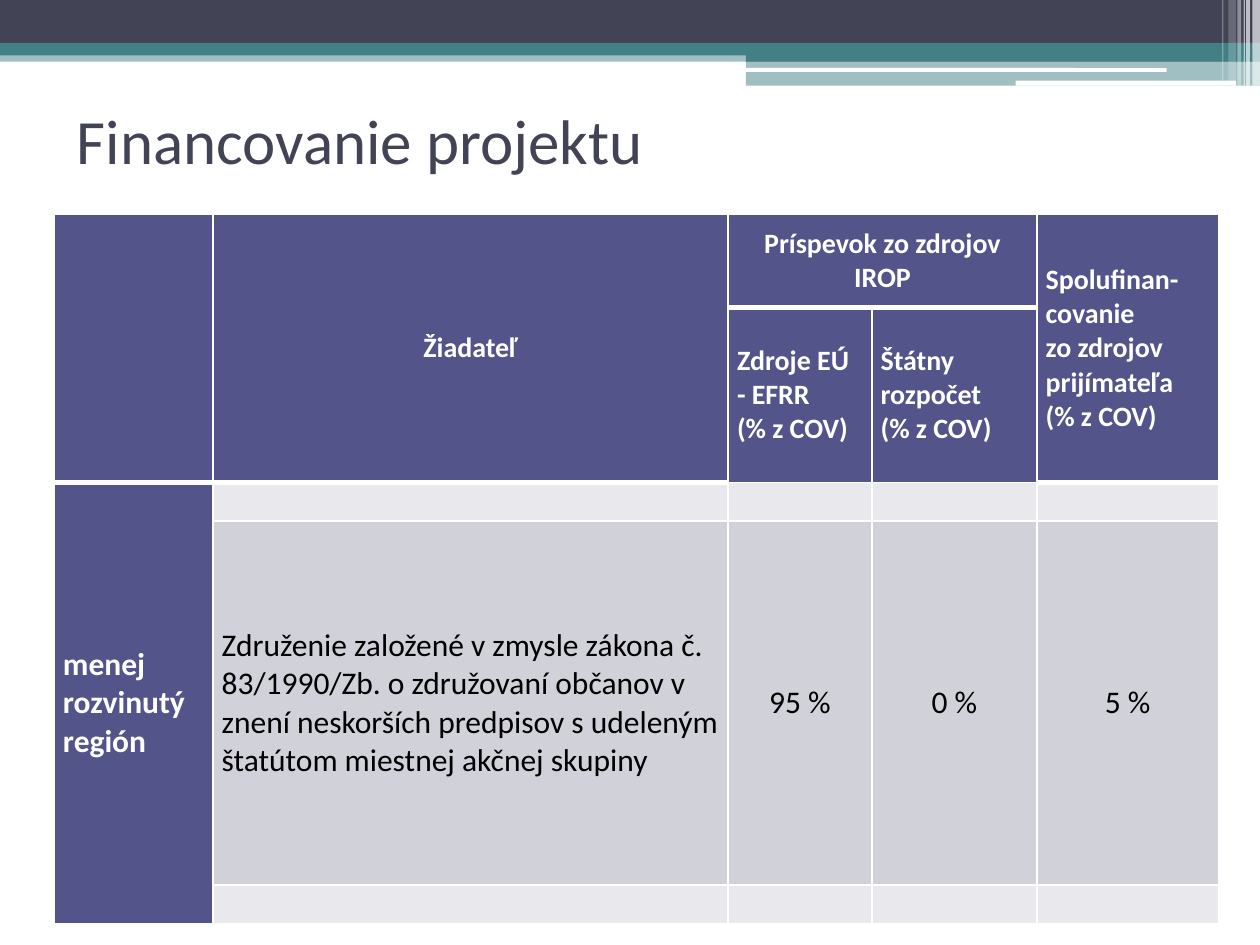
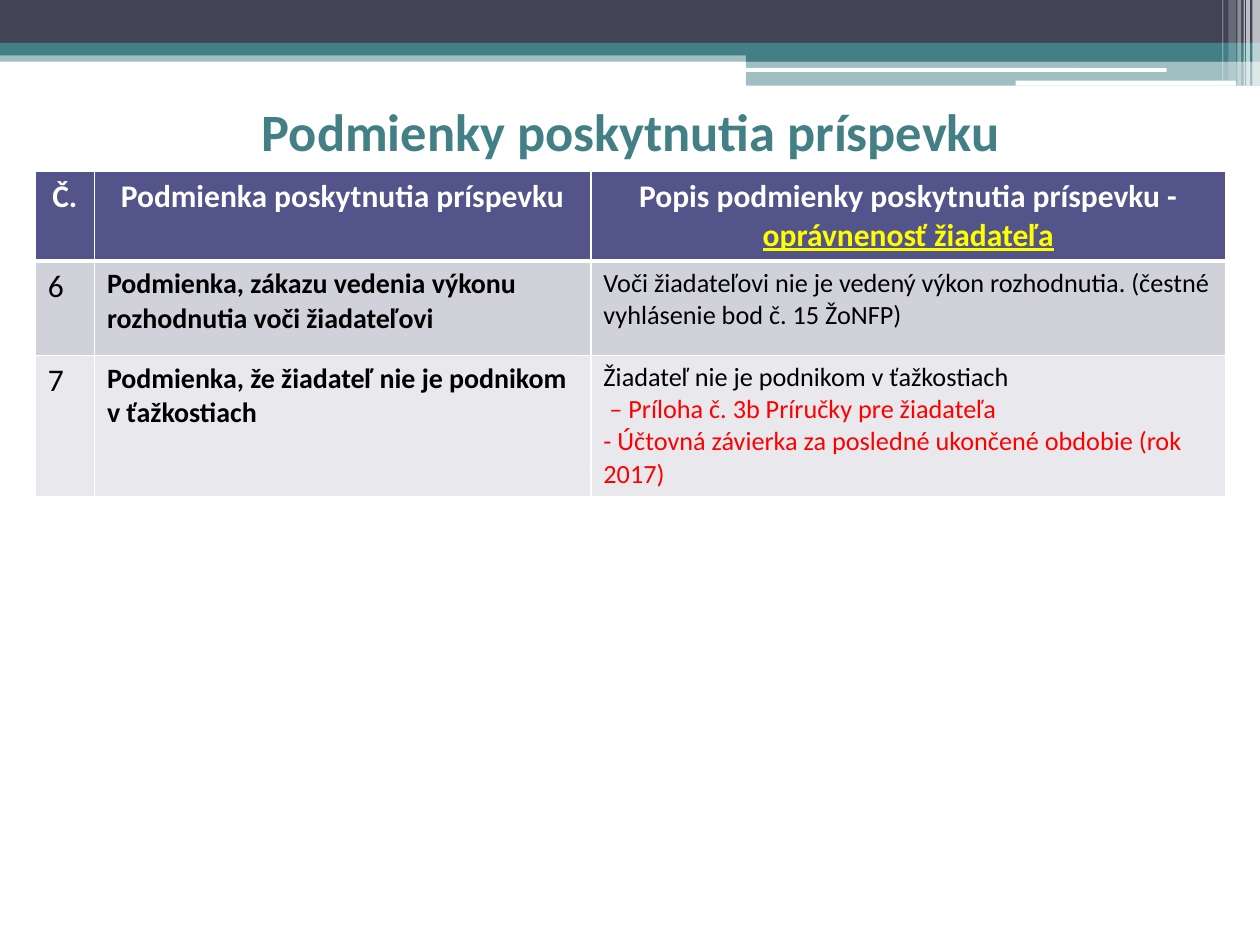
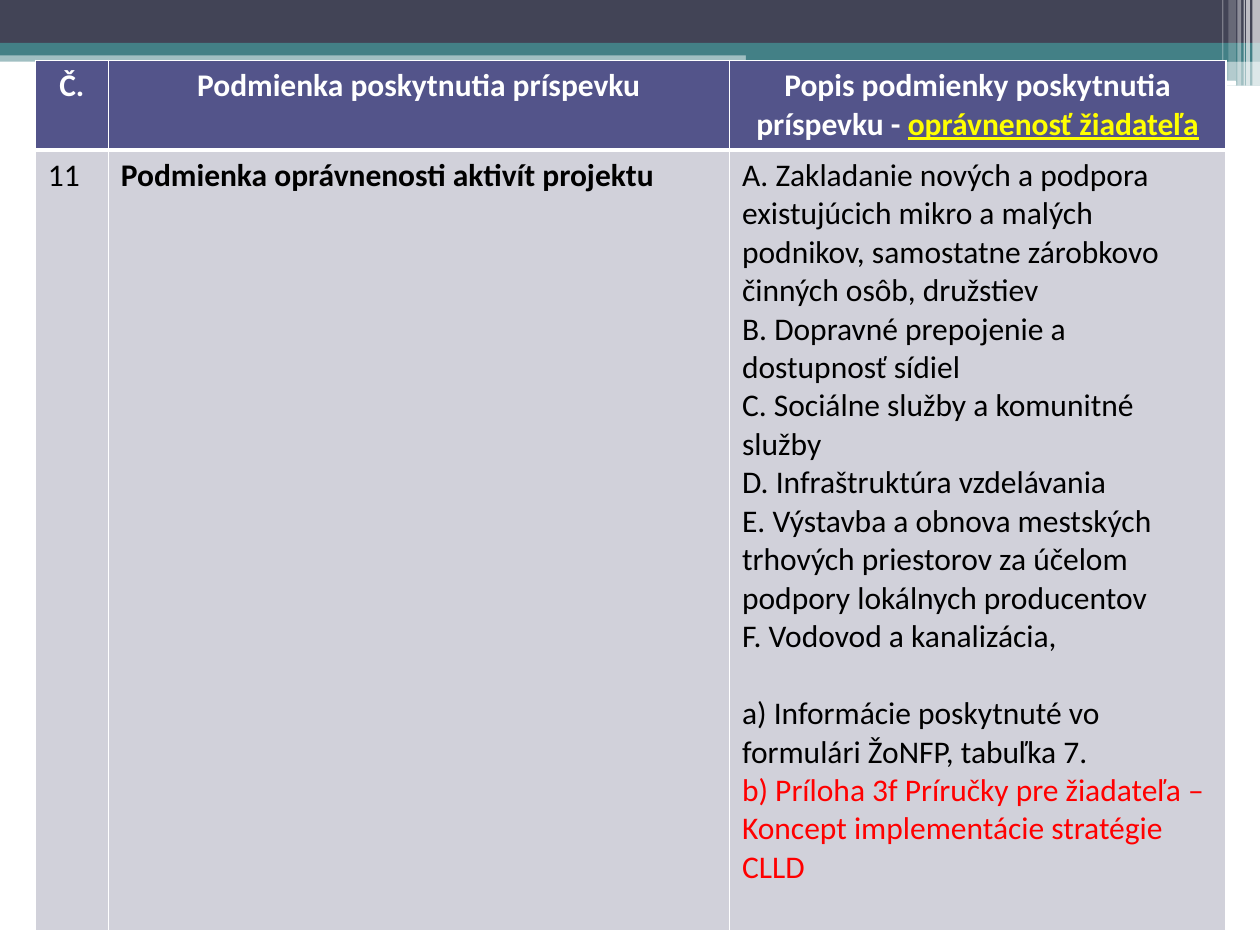
from dataclasses import dataclass

from lxml.etree import SubElement
from pptx import Presentation
from pptx.dml.color import RGBColor
from pptx.enum.shapes import MSO_SHAPE
from pptx.enum.text import MSO_ANCHOR, MSO_AUTO_SIZE, PP_ALIGN
from pptx.oxml import parse_xml
from pptx.oxml.ns import nsdecls, qn
from pptx.util import Inches, Pt

FONT = "Calibri"
WHITE = RGBColor(0xFF, 0xFF, 0xFF)
BLACK = RGBColor(0, 0, 0)
RED = RGBColor(0xFF, 0, 0)
YELLOW = RGBColor(0xFF, 0xFF, 0)
SLATE = RGBColor(0x42, 0x44, 0x56)
TEAL = RGBColor(0x43, 0x80, 0x86)
INDIGO = RGBColor(0x53, 0x54, 0x8A)
BAND_DARK = RGBColor(0xD1, 0xD1, 0xDA)
BAND_LIGHT = RGBColor(0xE9, 0xE9, 0xED)

TITLE_ONLY, BLANK = 5, 6
RECT, ROUND = MSO_SHAPE.RECTANGLE, MSO_SHAPE.ROUNDED_RECTANGLE

# Top band: shape, left, top, width, height, colour, opacity in percent
TOP_BAND = [
    (RECT, 0, 0.4, 10, 0.09, TEAL, 50),
    (RECT, 0, 0, 10, 0.34, SLATE, 100),
    (RECT, 0, 0.34, 10, 0.1, TEAL, 100),
    (RECT, 5.92, 0.39, 4.08, 0.1, TEAL, 100),
    (RECT, 5.92, 0.48, 4.08, 0.2, TEAL, 50),
    (ROUND, 5.91, 0.54, 3.35, 0.03, WHITE, 100),
    (ROUND, 8.06, 0.64, 1.75, 0.04, WHITE, 100),
    (RECT, 9.94, 0, 0.06, 0.68, WHITE, 65),
    (RECT, 9.89, 0, 0.03, 0.68, WHITE, 65),
    (RECT, 9.87, 0, 0.01, 0.68, WHITE, 60),
    (RECT, 9.82, 0, 0.03, 0.68, WHITE, 40),
    (RECT, 9.75, 0, 0.06, 0.64, WHITE, 20),
    (RECT, 9.7, 0, 0.01, 0.64, WHITE, 30),
]


@dataclass
class Line:
    """One paragraph that departs from the style of its cell."""
    text: str
    color: RGBColor = BLACK
    space_before: float = 0


class Deck:
    def __init__(self):
        self.presentation = Presentation()
        self.presentation.slide_width = Inches(10)
        self.presentation.slide_height = Inches(7.5)
        self.slide = None

    def add_slide(self, layout):
        layouts = self.presentation.slide_layouts
        self.slide = self.presentation.slides.add_slide(layouts[layout])

    def top_band(self):
        """Draw the band and move it to the master, shared by all slides."""
        master_tree = self.presentation.slide_master.shapes.element
        for number, (kind, left, top, width, height, color, opacity) in enumerate(TOP_BAND):
            strip = self.slide.shapes.add_shape(
                kind, Inches(left), Inches(top), Inches(width), Inches(height))
            strip.shadow.inherit = False
            strip.line.fill.background()
            strip.fill.solid()
            strip.fill.fore_color.rgb = color
            if opacity < 100:
                rgb = next(strip.element.iter(qn("a:srgbClr")))
                SubElement(rgb, qn("a:alpha"), val=str(opacity * 1000))
            strip.element.nvSpPr.cNvPr.set("id", str(100 + number))
            master_tree.append(strip.element)

    def style(self, paragraph, size, color, bold, align):
        paragraph.alignment = align
        font = paragraph.font
        font.name, font.size, font.bold = FONT, Pt(size), bold
        font.color.rgb = color

    def title(self, text, height, size, color, bold=False, align=PP_ALIGN.LEFT):
        title = self.slide.shapes.title
        title.left, title.top = Inches(0.51), Inches(0.76)
        title.width, title.height = Inches(9), Inches(height)
        frame = title.text_frame
        frame.text = text
        frame.auto_size = MSO_AUTO_SIZE.NONE
        frame.vertical_anchor = MSO_ANCHOR.MIDDLE
        self.style(frame.paragraphs[0], size, color, bold, align)

    def table(self, left, top, widths, heights):
        frame = self.slide.shapes.add_table(
            len(heights), len(widths), Inches(left), Inches(top),
            Inches(sum(widths)), Inches(sum(heights)))
        table = frame.table
        table.first_row = table.horz_banding = False
        for column, width in zip(table.columns, widths):
            column.width = Inches(width)
        for row, height in zip(table.rows, heights):
            row.height = Inches(height)
        return table

    def cell(self, cell, lines, fill, size=18, color=BLACK, bold=False,
             align=PP_ALIGN.LEFT, middle=False):
        cell.fill.solid()
        cell.fill.fore_color.rgb = fill
        if middle:
            cell.vertical_anchor = MSO_ANCHOR.MIDDLE
            cell.margin_left = cell.margin_right = Inches(0.07)
            cell.margin_top = cell.margin_bottom = 0
        lines = [line if isinstance(line, Line) else Line(line, color) for line in lines]
        cell.text = "\n".join(line.text for line in lines)
        for paragraph, line in zip(cell.text_frame.paragraphs, lines):
            self.style(paragraph, size, line.color, bold, align)
            if line.space_before:
                paragraph.space_before = Pt(line.space_before)

    def borders(self, table, header_rows=1):
        """White grid, with a heavy line under each header cell."""
        def heavy(row, column):
            return row == 0 or (0 < row < header_rows and table.cell(row, column).is_spanned)

        for row in range(len(table.rows)):
            for column in range(len(table.columns)):
                top = 3 if row and heavy(row - 1, column) else 1
                bottom = 3 if heavy(row, column) else 1
                properties = table.cell(row, column)._tc.get_or_add_tcPr()
                sides = [("lnL", 1), ("lnR", 1), ("lnT", top), ("lnB", bottom)]
                for place, (side, width) in enumerate(sides):
                    properties.insert(place, parse_xml(
                        f'<a:{side} {nsdecls("a")} w="{Pt(width)}"><a:solidFill>'
                        f'<a:srgbClr val="{WHITE}"/></a:solidFill></a:{side}>'))

    def conditions(self, top, widths, heights, rows, sizes):
        """Numbered conditions; rows hold number, condition and description lines."""
        table = self.table(0.28, top, widths, heights)
        headings = ["Č.", "Podmienka poskytnutia príspevku",
                    "Popis podmienky poskytnutia príspevku - "]
        for column, heading in enumerate(headings):
            self.cell(table.cell(0, column), [heading], INDIGO, color=WHITE,
                      bold=True, align=PP_ALIGN.CENTER)
        topic = table.cell(0, 2).text_frame.paragraphs[0].add_run()
        topic.text = "oprávnenosť žiadateľa"
        topic.font.underline = True
        topic.font.color.rgb = YELLOW
        for row, (number, condition, description) in enumerate(rows, 1):
            fill = BAND_DARK if row % 2 else BAND_LIGHT
            for column, lines in enumerate([[number], [condition], description]):
                self.cell(table.cell(row, column), lines, fill,
                          size=sizes[column], bold=column == 1)
        self.borders(table)


def financing(deck):
    deck.add_slide(TITLE_ONLY)
    deck.top_band()
    deck.title("Financovanie projektu", 0.69, 36, SLATE)
    table = deck.table(0.43, 1.7, [1.26, 4.09, 1.14, 1.31, 1.44],
                       [0.74, 1.39, 0.3, 2.89, 0.3])

    # Merged areas: first and last cell
    for first, last in [((0, 0), (1, 0)), ((0, 1), (1, 1)), ((0, 2), (0, 3)),
                        ((0, 4), (1, 4)), ((2, 0), (4, 0))]:
        table.cell(*first).merge(table.cell(*last))

    # Header and region
    center, left = PP_ALIGN.CENTER, PP_ALIGN.LEFT
    share = "(% z COV)"
    headings = [
        (0, 0, [""], left, 16),
        (0, 1, ["Žiadateľ"], center, 16),
        (0, 2, ["Príspevok zo zdrojov IROP"], center, 16),
        (0, 4, ["Spolufinan-covanie", "zo zdrojov prijímateľa", share], left, 16),
        (1, 2, ["Zdroje EÚ - EFRR", share], left, 16),
        (1, 3, ["Štátny rozpočet", share], left, 16),
        (2, 0, ["menej rozvinutý región"], PP_ALIGN.JUSTIFY, 18),
    ]
    for row, column, lines, align, size in headings:
        deck.cell(table.cell(row, column), lines, INDIGO, size, WHITE, True, align, True)

    # Shares, between two empty rows
    applicant = ("Združenie založené v zmysle zákona č. 83/1990/Zb. o združovaní občanov v "
                 "znení neskorších predpisov s udeleným štatútom miestnej akčnej skupiny")
    for column, text in enumerate([applicant, "95 %", "0 %", "5 %"], 1):
        for row in (2, 4):
            deck.cell(table.cell(row, column), [""], BAND_LIGHT, middle=True)
        deck.cell(table.cell(3, column), [text], BAND_DARK,
                  align=left if column == 1 else center, middle=True)
    deck.borders(table, header_rows=2)


def applicant_conditions(deck):
    deck.add_slide(TITLE_ONLY)
    deck.title("Podmienky poskytnutia príspevku", 0.55, 30, TEAL, True, PP_ALIGN.CENTER)
    deck.conditions(1.36, [0.47, 3.94, 5.04], [0.7, 0.75, 1.12], [
        ("6", "Podmienka, zákazu vedenia výkonu rozhodnutia voči žiadateľovi",
         ["Voči žiadateľovi nie je vedený výkon rozhodnutia. "
          "(čestné vyhlásenie bod č. 15 ŽoNFP)"]),
        ("7", "Podmienka, že žiadateľ nie je podnikom v ťažkostiach",
         ["Žiadateľ nie je podnikom v ťažkostiach",
          Line(" – Príloha č. 3b Príručky pre žiadateľa", RED),
          Line("- Účtovná závierka za posledné ukončené obdobie (rok 2017)", RED)]),
    ], sizes=[18, 16, 15])


def activity_conditions(deck):
    deck.add_slide(BLANK)
    deck.conditions(0.48, [0.58, 4.93, 3.94], [0.71, 6.2], [
        ("11", "Podmienka oprávnenosti aktivít projektu",
         ["A. Zakladanie nových a podpora existujúcich mikro a malých podnikov, "
          "samostatne zárobkovo činných osôb, družstiev",
          "B. Dopravné prepojenie a dostupnosť sídiel",
          "C. Sociálne služby a komunitné služby",
          "D. Infraštruktúra vzdelávania",
          "E. Výstavba a obnova mestských trhových priestorov za účelom podpory "
          "lokálnych producentov",
          "F. Vodovod a kanalizácia,",
          Line("a) Informácie poskytnuté vo formulári ŽoNFP, tabuľka 7.", space_before=22),
          Line("b) Príloha 3f Príručky pre žiadateľa – Koncept implementácie "
               "stratégie CLLD", RED)]),
    ], sizes=[18, 18, 18])


def main():
    deck = Deck()
    financing(deck)
    applicant_conditions(deck)
    activity_conditions(deck)
    deck.presentation.save("out.pptx")


if __name__ == "__main__":
    main()
